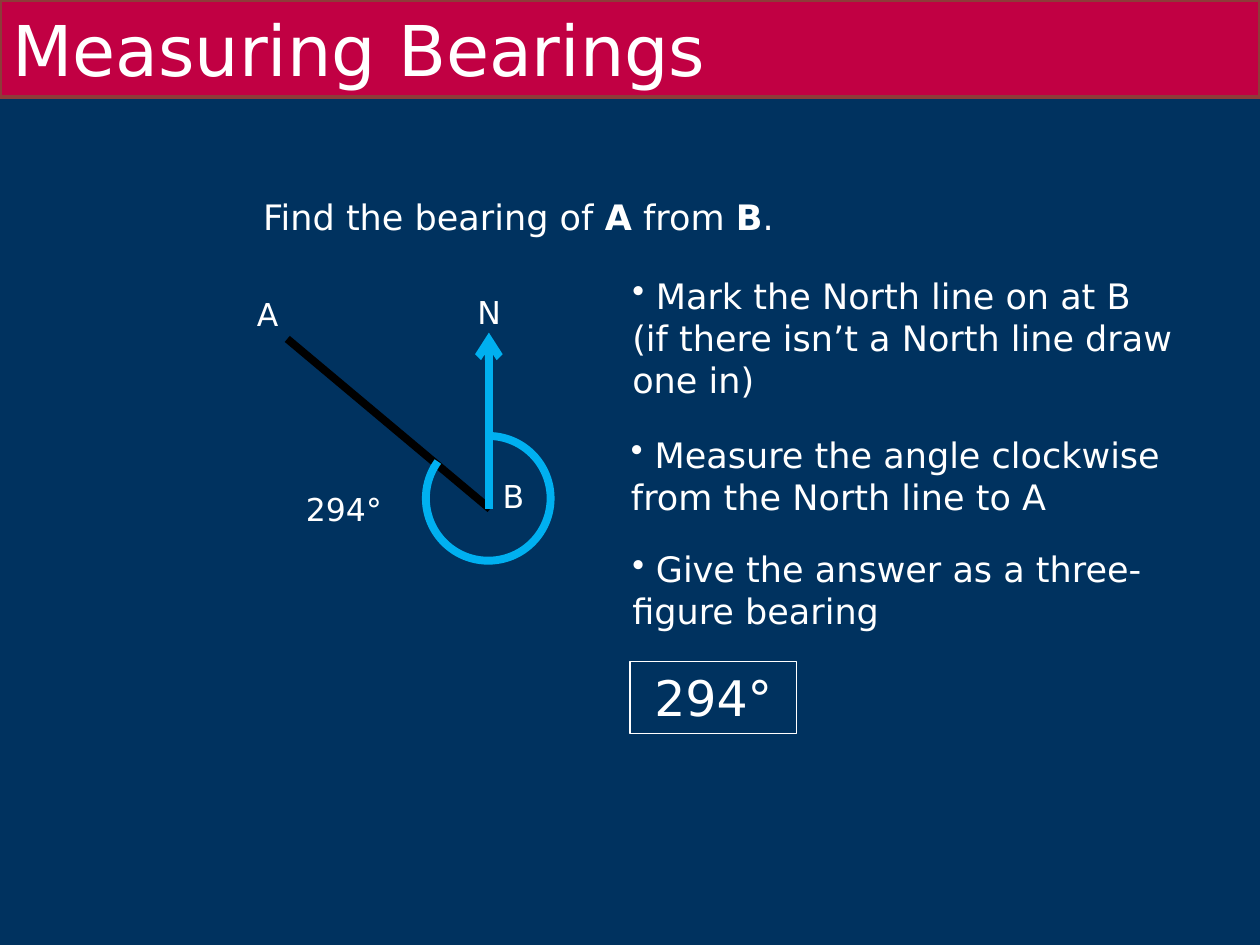
from lxml import etree
from pptx import Presentation
from pptx.dml.color import RGBColor
from pptx.enum.shapes import MSO_CONNECTOR, MSO_SHAPE
from pptx.enum.text import MSO_ANCHOR, PP_ALIGN
from pptx.oxml.ns import qn
from pptx.util import Inches, Pt

STRAIGHT = MSO_CONNECTOR.STRAIGHT
RECTANGLE, ARC = MSO_SHAPE.RECTANGLE, MSO_SHAPE.ARC
MIDDLE = MSO_ANCHOR.MIDDLE
LEFT, CENTER = PP_ALIGN.LEFT, PP_ALIGN.CENTER

FONT = "DejaVu Sans"
NAVY, CRIMSON, BROWN = "00325F", "C10043", "8E3B39"
WHITE, BLACK, SKY = "FFFFFF", "000000", "00B0F0"

TITLE = "Measuring Bearings"
ANSWER = "294°"
QUESTION = [("Find the bearing of ", False), ("A", True), (" from ", False), ("B", True), (".", False)]
STEPS = [
    (" Mark the North line on at B (if there isn’t a North line draw one in)", (4.92, 2.13, 4.5, 1.11)),
    (" Measure the angle clockwise from the North line to A", (4.91, 3.39, 4.5, 0.77)),
    (" Give the answer as a three-figure bearing", (4.92, 4.3, 4.5, 0.77)),
]
POINT_LABELS = [
    ("A", (1.94, 2.29, 0.39, 0.4)),
    ("B", (3.89, 3.74, 0.38, 0.4)),
    ("N", (3.69, 2.28, 0.4, 0.4)),
]
ANGLE_BOX = (2.33, 3.84, 1.06, 0.4)
LINE_TO_A = ((2.28, 2.69), (3.89, 4.04))
NORTH_LINE = ((3.88, 4.04), (3.88, 2.64))
ARC_BOX = (3.38, 3.46, 0.99, 0.99)
ARC_ANGLES = (270, 216.16)


def color(value):
    return RGBColor.from_string(value)


def inches(values):
    return [Inches(value) for value in values]


def write(shape, runs, size, align=LEFT, wrap=True):
    frame = shape.text_frame
    frame.word_wrap = wrap
    paragraph = frame.paragraphs[0]
    paragraph.alignment = align
    paragraph.font.name = FONT
    paragraph.font.size = Pt(size)
    paragraph.font.color.rgb = color(WHITE)
    for text, bold in runs:
        run = paragraph.add_run()
        run.text = text
        if bold:
            run.font.bold = True
    return paragraph


def add_text(slide, box, runs, size, wrap=True):
    return write(slide.shapes.add_textbox(*inches(box)), runs, size, wrap=wrap)


def add_bullet(paragraph):
    properties = paragraph._p.get_or_add_pPr()
    bullet = etree.Element(qn("a:buChar"), char="•")
    properties.insert(0, bullet)


def add_outlined(slide, kind, box, line, width, fill=None):
    shape = slide.shapes.add_shape(kind, *inches(box))
    shape.shadow.inherit = False
    if fill:
        shape.fill.solid()
        shape.fill.fore_color.rgb = color(fill)
    else:
        shape.fill.background()
    shape.line.color.rgb = color(line)
    shape.line.width = Pt(width)
    return shape


def add_line(slide, ends, line, arrow=False):
    start, end = ends
    connector = slide.shapes.add_connector(STRAIGHT, *inches(start + end))
    connector.line.color.rgb = color(line)
    connector.line.width = Pt(4.5)
    if arrow:
        etree.SubElement(connector.line._get_or_add_ln(), qn("a:tailEnd"), type="arrow")
    etree.SubElement(connector._element.spPr, qn("a:effectLst"))


def main():
    deck = Presentation()
    deck.slide_width, deck.slide_height = Inches(10), Inches(7.5)
    slide = deck.slides.add_slide(deck.slide_layouts[6])
    slide.background.fill.solid()
    slide.background.fill.fore_color.rgb = color(NAVY)

    add_text(slide, (1.99, 1.5, 5.36, 0.44), QUESTION, 20)
    for step, box in STEPS:
        add_bullet(add_text(slide, box, [(step, False)], 20))

    banner = add_outlined(slide, RECTANGLE, (0, 0, 10, 0.77), BROWN, 2, CRIMSON)
    banner.text_frame.vertical_anchor = MIDDLE
    write(banner, [(TITLE, False)], 40)

    add_line(slide, LINE_TO_A, BLACK)
    add_line(slide, NORTH_LINE, SKY, arrow=True)
    for label, box in POINT_LABELS:
        add_text(slide, box, [(label, False)], 18, wrap=False)

    bearing_arc = add_outlined(slide, ARC, ARC_BOX, SKY, 4.5)
    for index, degrees in enumerate(ARC_ANGLES):
        bearing_arc.adjustments[index] = degrees * 0.6
    add_text(slide, ANGLE_BOX, [(ANSWER, False)], 18)

    answer_box = add_outlined(slide, RECTANGLE, (5, 5.25, 1.32, 0.57), WHITE, 0.75)
    answer_box.text_frame.vertical_anchor = MIDDLE
    write(answer_box, [(ANSWER, False)], 28, CENTER)

    deck.save("out.pptx")


if __name__ == "__main__":
    main()
